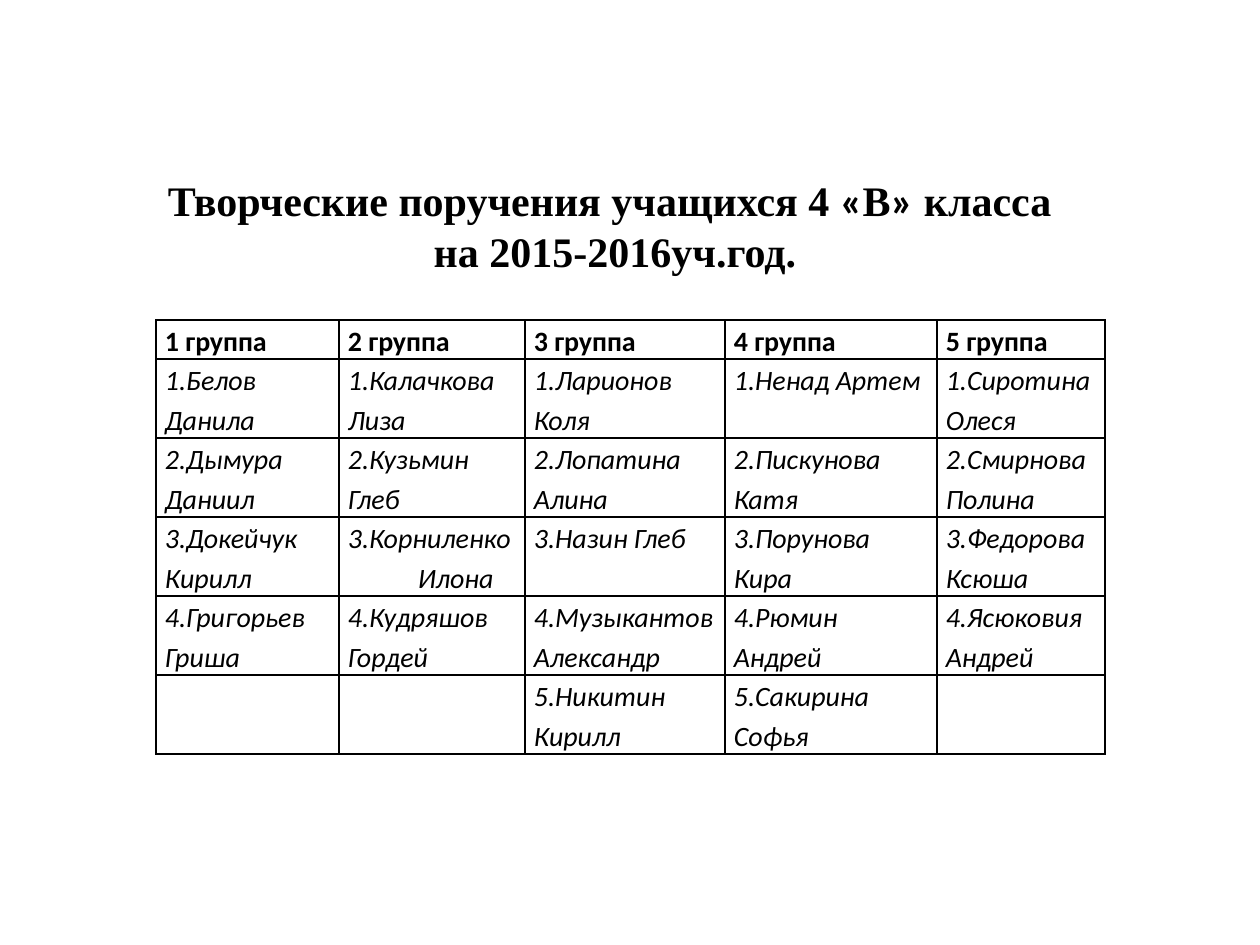
import pptx
import pptx.util
from lxml import etree
from pptx.dml.color import RGBColor
from pptx.enum.text import MSO_ANCHOR, PP_ALIGN
from pptx.oxml.ns import qn

PX = 914400 // 126
BLACK = RGBColor(0, 0, 0)
COLUMN_WIDTHS = [183, 186, 200, 212, 168]
HEADER_HEIGHT, ROW_HEIGHT = 39, 79
SECOND_LINE_INDENT = 70

ROWS = [
    ["1 группа", "2 группа", "3 группа", "4 группа", "5 группа"],
    ["1.Белов Данила", "1.Калачкова Лиза", "1.Ларионов Коля",
     "1.Ненад Артем", "1.Сиротина Олеся"],
    ["2.Дымура Даниил", "2.Кузьмин Глеб", "2.Лопатина Алина",
     "2.Пискунова Катя", "2.Смирнова Полина"],
    ["3.Докейчук Кирилл", "3.Корниленко\nИлона", "3.Назин Глеб",
     "3.Порунова Кира", "3.Федорова Ксюша"],
    ["4.Григорьев Гриша", "4.Кудряшов Гордей", "4.Музыкантов Александр",
     "4.Рюмин Андрей", "4.Ясюковия Андрей"],
    ["", "", "5.Никитин Кирилл", "5.Сакирина Софья", ""],
]
TITLE = [
    [("Творческие поручения учащихся 4 ", "Times New Roman"),
     ("«", "Calibri"), ("В", "Times New Roman"), ("»", "Calibri"),
     (" класса ", "Times New Roman")],
    [("на 2015-2016уч.год.", "Times New Roman")],
]


def set_borders(cell):
    """Draw a thin black line on all four sides of a cell."""
    tcPr = cell._tc.get_or_add_tcPr()
    for i, side in enumerate(("a:lnL", "a:lnR", "a:lnT", "a:lnB")):
        ln = etree.Element(qn(side), w=str(pptx.util.Pt(1)))
        fill = etree.SubElement(ln, qn("a:solidFill"))
        etree.SubElement(fill, qn("a:srgbClr"), val=str(BLACK))
        tcPr.insert(i, ln)


prs = pptx.Presentation()
prs.slide_width, prs.slide_height = 1260 * PX, 945 * PX
s = prs.slides.add_slide(prs.slide_layouts[6])

# Title
sp = s.shapes.add_textbox(64 * PX, 168 * PX, 1102 * PX, 152 * PX)
tf = sp.text_frame
tf.word_wrap = True
tf.vertical_anchor = MSO_ANCHOR.MIDDLE
tf.margin_bottom = 44 * PX
for i, line in enumerate(TITLE):
    p = tf.add_paragraph() if i else tf.paragraphs[0]
    p.alignment = PP_ALIGN.CENTER
    p.font.size = pptx.util.Pt(24)
    p.font.bold = True
    p.font.color.rgb = BLACK
    for text, font in line:
        r = p.add_run()
        r.text = text
        r.font.name = font

# Table of groups
heights = [HEADER_HEIGHT] + [ROW_HEIGHT] * (len(ROWS) - 1)
table = s.shapes.add_table(
    len(ROWS), len(COLUMN_WIDTHS), 156 * PX, 320 * PX,
    sum(COLUMN_WIDTHS) * PX, sum(heights) * PX).table
table.first_row = table.horz_banding = False
for column, width in zip(table.columns, COLUMN_WIDTHS):
    column.width = width * PX
for row, height, texts in zip(table.rows, heights, ROWS):
    row.height = height * PX
    header = texts is ROWS[0]
    for cell, text in zip(row.cells, texts):
        cell.fill.background()
        set_borders(cell)
        cell.margin_left = cell.margin_right = 9 * PX
        cell.margin_top = cell.margin_bottom = 0
        cell.text = text
        for i, p in enumerate(cell.text_frame.paragraphs):
            p.line_spacing = 1.15
            p.font.name = "Calibri"
            p.font.size = pptx.util.Pt(16)
            p.font.bold = header
            p.font.italic = not header
            p.font.color.rgb = BLACK
            if i:
                p._p.get_or_add_pPr().set("marL", str(SECOND_LINE_INDENT * PX))

prs.save("out.pptx")
